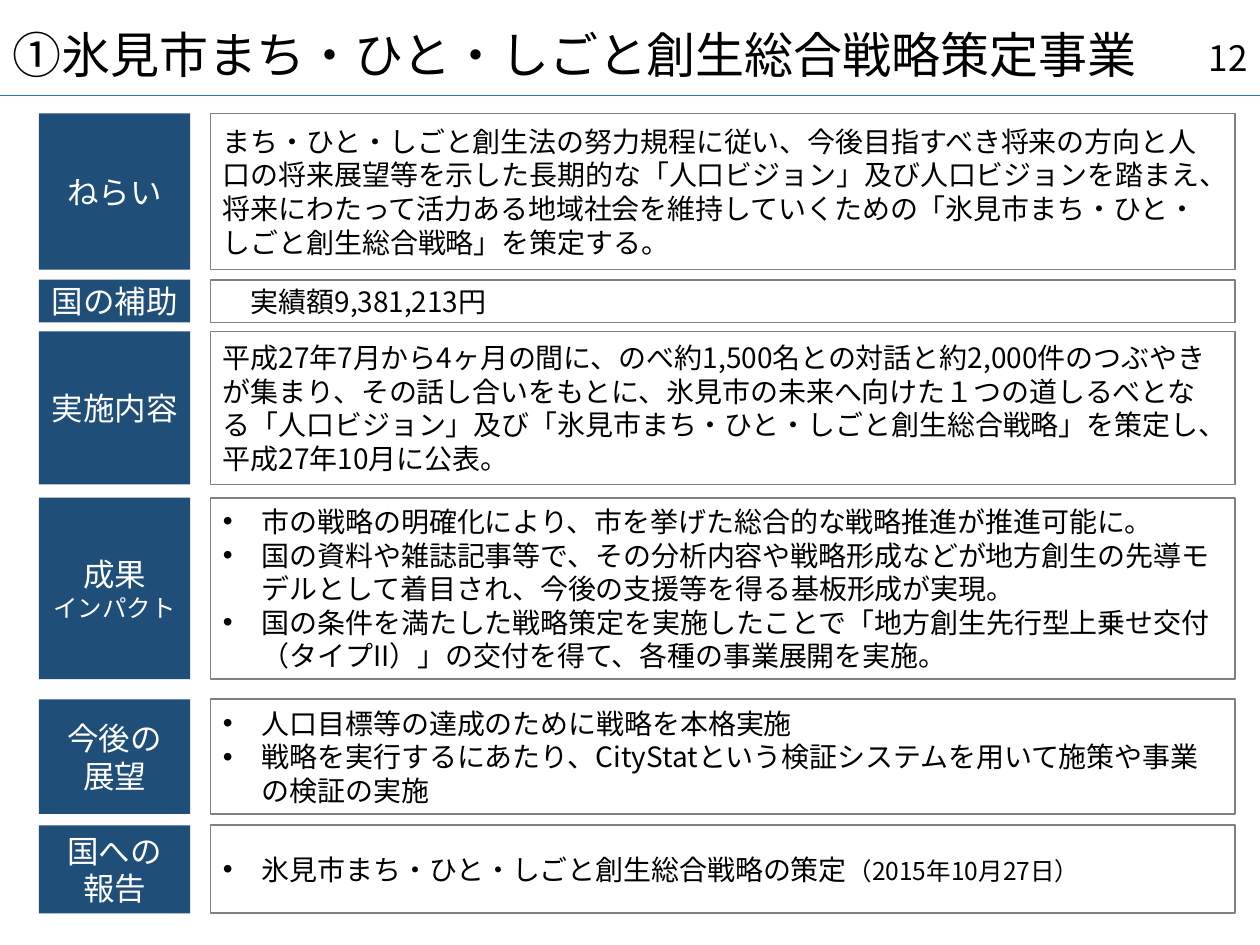
from dataclasses import dataclass

from lxml import etree
from pptx import Presentation
from pptx.dml.color import RGBColor
from pptx.enum.lang import MSO_LANGUAGE_ID
from pptx.enum.shapes import MSO_CONNECTOR, MSO_SHAPE
from pptx.enum.text import MSO_ANCHOR, PP_ALIGN
from pptx.oxml.ns import qn
from pptx.util import Inches, Pt

RECTANGLE = MSO_SHAPE.RECTANGLE
STRAIGHT = MSO_CONNECTOR.STRAIGHT
MIDDLE = MSO_ANCHOR.MIDDLE
LEFT, CENTER, RIGHT = PP_ALIGN.LEFT, PP_ALIGN.CENTER, PP_ALIGN.RIGHT
JAPANESE = MSO_LANGUAGE_ID.JAPANESE

NAVY = RGBColor(0x1F, 0x4E, 0x79)
BLUE = RGBColor(0x2E, 0x75, 0xB6)
GRAY = RGBColor(0x80, 0x80, 0x80)
WHITE = RGBColor(0xFF, 0xFF, 0xFF)
BLACK = RGBColor(0x00, 0x00, 0x00)

FONT = "Noto Sans CJK JP"
WIDTH, HEIGHT = Inches(10), Inches(7.5)
LABEL_SIZE, BODY_SIZE, SMALL_SIZE = 18, 16, 14
BULLET_INDENT = Inches(0.31)
PLAIN, INDENTED, BULLETED = "plain", "indented", "bulleted"


@dataclass
class Box:
    """A rectangle in EMU."""

    left: int
    top: int
    width: int
    height: int

    def share(self, left, top, width, height):
        """Return the area given in percent of this box."""
        return Box(
            int(self.left + self.width * left / 100),
            int(self.top + self.height * top / 100),
            int(self.width * width / 100),
            int(self.height * height / 100),
        )

    def bounds(self):
        """Return left, top, width and height."""
        return self.left, self.top, self.width, self.height


PAGE = Box(0, 0, WIDTH, HEIGHT)

ROWS = [
    (12, 16.53, [[("ねらい", LABEL_SIZE)]], PLAIN, [[(
        "まち・ひと・しごと創生法の努力規程に従い、今後目指すべき将来の方向と人口の将来展望等を"
        "示した長期的な「人口ビジョン」及び人口ビジョンを踏まえ、将来にわたって活力ある地域社会を"
        "維持していくための「氷見市まち・ひと・しごと創生総合戦略」を策定する。", BODY_SIZE)]]),
    (29.6, 4.53, [[("国の補助", LABEL_SIZE)]], INDENTED,
     [[("実績額9,381,213円", BODY_SIZE)]]),
    (35.07, 16.2, [[("実施内容", LABEL_SIZE)]], PLAIN, [[(
        "平成27年7月から4ヶ月の間に、のべ約1,500名との対話と約2,000件のつぶやきが集まり、"
        "その話し合いをもとに、氷見市の未来へ向けた１つの道しるべとなる「人口ビジョン」及び"
        "「氷見市まち・ひと・しごと創生総合戦略」を策定し、平成27年10月に公表。", BODY_SIZE)]]),
    (52.67, 19.2, [[("成果", LABEL_SIZE)], [("インパクト", SMALL_SIZE)]], BULLETED, [
        [("市の戦略の明確化により、市を挙げた総合的な戦略推進が推進可能に。", BODY_SIZE)],
        [("国の資料や雑誌記事等で、その分析内容や戦略形成などが地方創生の先導モデルとして"
          "着目され、今後の支援等を得る基板形成が実現。", BODY_SIZE)],
        [("国の条件を満たした戦略策定を実施したことで「地方創生先行型上乗せ交付"
          "（タイプII）」の交付を得て、各種の事業展開を実施。", BODY_SIZE)]]),
    (74, 12.13, [[("今後の", LABEL_SIZE)], [("展望", LABEL_SIZE)]], BULLETED, [
        [("人口目標等の達成のために戦略を本格実施", BODY_SIZE)],
        [("戦略を実行するにあたり、CityStatという検証システムを用いて施策や事業の検証の実施",
          BODY_SIZE)]]),
    (87.33, 9.33, [[("国への", LABEL_SIZE)], [("報告", LABEL_SIZE)]], BULLETED, [
        [("氷見市まち・ひと・しごと創生総合戦略の策定", BODY_SIZE),
         ("（2015年10月27日）", SMALL_SIZE)]]),
]


def add_run(paragraph, text, size, color):
    """Add one run with its font for Latin and Japanese letters."""
    run = paragraph.add_run()
    run.text = text
    font = run.font
    font.name, font.size, font.language_id = FONT, Pt(size), JAPANESE
    font.color.rgb = color
    east_asian = etree.Element(qn("a:ea"), typeface=FONT)
    run._r.rPr.find(qn("a:latin")).addnext(east_asian)


def indent(paragraph, style):
    """Give a paragraph the indent and bullet of its style."""
    properties = paragraph._p.get_or_add_pPr()
    if style == INDENTED:
        properties.set("marL", str(Pt(BODY_SIZE)))
    elif style == BULLETED:
        properties.set("marL", str(BULLET_INDENT))
        properties.set("indent", str(-BULLET_INDENT))
        etree.SubElement(properties, qn("a:buFont"), typeface="Arial")
        etree.SubElement(properties, qn("a:buChar"), char="•")


def write(shape, paragraphs, color, alignment, style=PLAIN):
    """Fill a shape with vertically centred paragraphs of runs."""
    frame = shape.text_frame
    frame.word_wrap = True
    frame.vertical_anchor = MIDDLE
    for index, runs in enumerate(paragraphs):
        paragraph = frame.add_paragraph() if index else frame.paragraphs[0]
        paragraph.alignment = alignment
        indent(paragraph, style)
        for text, size in runs:
            add_run(paragraph, text, size, color)
    return frame


def add_panel(slide, box, fill, line=None):
    """Add a flat rectangle with an optional outline."""
    shape = slide.shapes.add_shape(RECTANGLE, *box.bounds())
    shape.shadow.inherit = False
    shape.fill.solid()
    shape.fill.fore_color.rgb = fill
    if line is None:
        shape.line.fill.background()
    else:
        shape.line.color.rgb = line
        shape.line.width = Pt(1)
    return shape


def add_header(slide, box):
    """Add the title, the page number and the rule along the lower edge."""
    bottom = box.top + box.height
    rule = slide.shapes.add_connector(
        STRAIGHT, box.left, bottom, box.left + box.width, bottom)
    rule.line.color.rgb = BLUE
    rule.line.width = Pt(0.5)
    etree.SubElement(rule._element.spPr, qn("a:effectLst"))
    title = slide.shapes.add_textbox(*box.share(0, 40.8, 100, 38.2).bounds())
    frame = write(title, [[("①氷見市まち・ひと・しごと創生総合戦略策定事業", 28)]], BLACK, LEFT)
    frame.paragraphs[0].line_spacing = 0.9
    number = slide.shapes.add_textbox(*box.share(77.5, 34.2, 22.5, 52.6).bounds())
    write(number, [[("12", 20)]], BLACK, RIGHT)


def add_row(slide, box, label, style, body):
    """Add a dark label beside its outlined description."""
    label_shape = add_panel(slide, box.share(3.1, 0, 12, 100), NAVY)
    frame = write(label_shape, label, WHITE, CENTER)
    frame.margin_left = frame.margin_right = Inches(0.05)
    body_shape = add_panel(slide, box.share(16.7, 0, 81.3, 100), WHITE, GRAY)
    write(body_shape, body, BLACK, LEFT, style)


def main():
    """Build the slide and save it."""
    presentation = Presentation()
    presentation.slide_width, presentation.slide_height = WIDTH, HEIGHT
    slide = presentation.slides.add_slide(presentation.slide_layouts[6])
    add_header(slide, PAGE.share(0, 0, 100, 10.13))
    for top, height, label, style, body in ROWS:
        add_row(slide, PAGE.share(0, top, 100, height), label, style, body)
    presentation.save("out.pptx")


if __name__ == "__main__":
    main()
